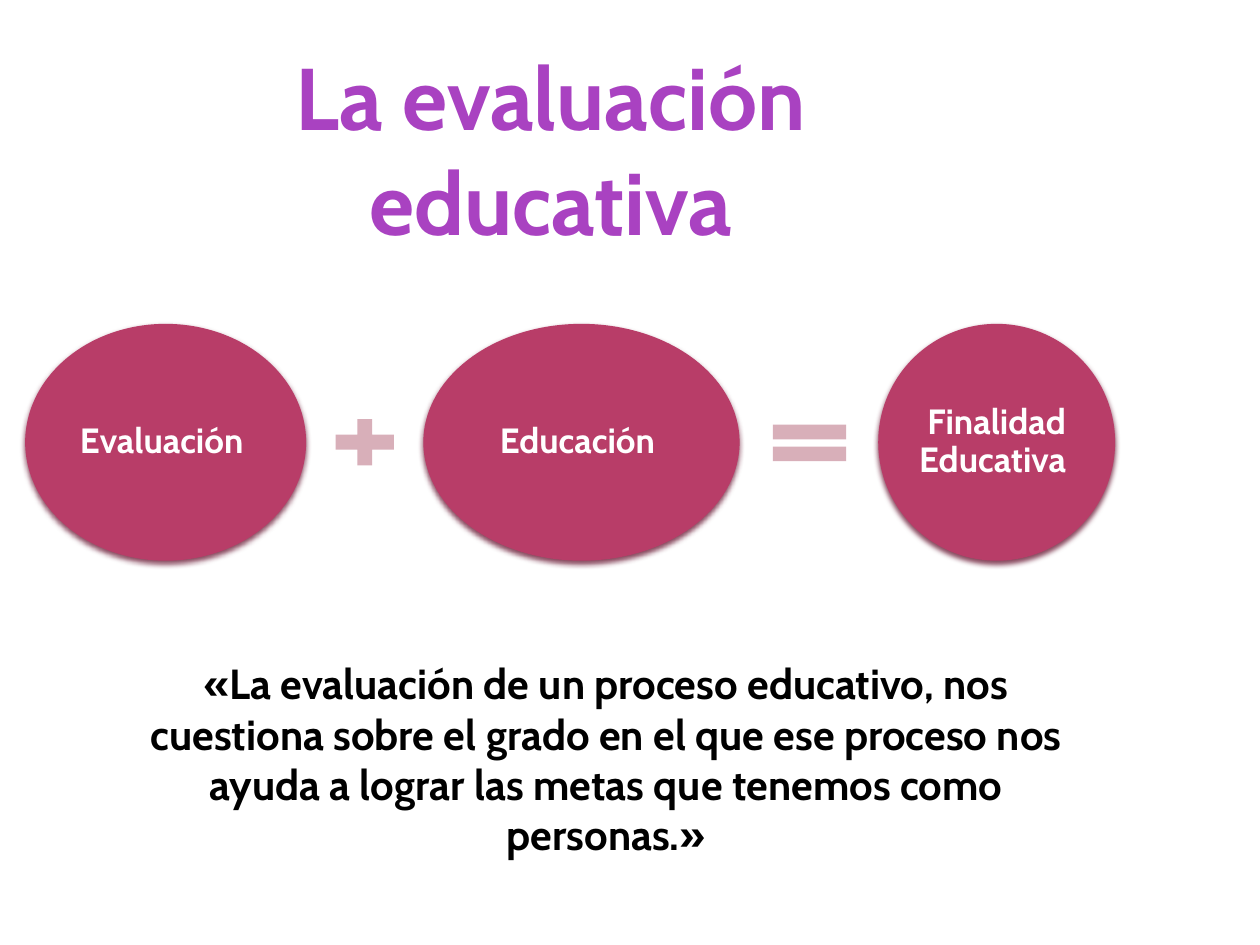
"""Build the slide on educational evaluation as a sum of concepts."""
from lxml import etree
from pptx import Presentation
from pptx.dml.color import RGBColor
from pptx.enum import shapes, text
from pptx.oxml import ns
from pptx.util import Inches, Pt


def add_text(paragraph, wording, size, color):
    paragraph.alignment = text.PP_ALIGN.CENTER
    run = paragraph.add_run()
    run.text = wording
    run.font.name = "Cabin"
    run.font.size = Pt(size)
    run.font.bold = True
    run.font.color.rgb = RGBColor.from_string(color)


def add_flat_shape(preset, left, top, width, height, color):
    shape = slide.shapes.add_shape(
        preset, Inches(left), Inches(top), Inches(width), Inches(height))
    shape.shadow.inherit = False
    shape.fill.solid()
    shape.fill.fore_color.rgb = RGBColor.from_string(color)
    shape.line.fill.background()
    return shape


presentation = Presentation()
presentation.slide_width = Inches(10)
presentation.slide_height = Inches(7.5)
slide = presentation.slides.add_slide(presentation.slide_layouts[6])

concepts = [
    ("Evaluación ", 0.2, 2.23),
    ("Educación ", 3.36, 2.51),
    ("Finalidad Educativa ", 6.97, 1.88),
]
for wording, left, width in concepts:
    ellipse = add_flat_shape(
        shapes.MSO_SHAPE.OVAL, left, 2.57, width, 1.88, "B83D68")
    effects = ellipse._element.spPr.find(ns.qn("a:effectLst"))
    shadow = etree.SubElement(
        effects, ns.qn("a:outerShdw"), blurRad=str(Pt(3.1)),
        dist=str(Pt(2)), dir="5400000", rotWithShape="0")
    shadow_color = etree.SubElement(shadow, ns.qn("a:srgbClr"), val="722640")
    etree.SubElement(shadow_color, ns.qn("a:alpha"), val="83000")
    frame = ellipse.text_frame
    frame.word_wrap = True
    frame.vertical_anchor = text.MSO_ANCHOR.MIDDLE
    frame.margin_left = frame.margin_right = Inches(0.03)
    frame.margin_top = frame.margin_bottom = Inches(0.03)
    paragraph = frame.paragraphs[0]
    paragraph.line_spacing = 0.9
    add_text(paragraph, wording, 20, "FFFFFF")

add_flat_shape(shapes.MSO_SHAPE.MATH_PLUS, 2.58, 3.26, 0.63, 0.5, "D8AFB9")
add_flat_shape(shapes.MSO_SHAPE.MATH_EQUAL, 6.03, 3.27, 0.79, 0.49, "D8AFB9")

quote = (
    "«La evaluación de un proceso educativo, nos cuestiona sobre el grado "
    "en el que ese proceso nos ayuda a lograr las metas que tenemos como "
    "personas.»"
)
text_boxes = [
    ((0.91, 5.17, 7.8, 1.72), [quote], 24, "000000"),
    ((0.2, 0.29, 8.5, 1.78), ["La evaluación ", "educativa "], 50, "A942C1"),
]
for position, lines, size, color in text_boxes:
    box = slide.shapes.add_textbox(*map(Inches, position))
    frame = box.text_frame
    frame.word_wrap = True
    frame.auto_size = text.MSO_AUTO_SIZE.SHAPE_TO_FIT_TEXT
    for index, line in enumerate(lines):
        paragraph = frame.add_paragraph() if index else frame.paragraphs[0]
        add_text(paragraph, line, size, color)

presentation.save("out.pptx")
